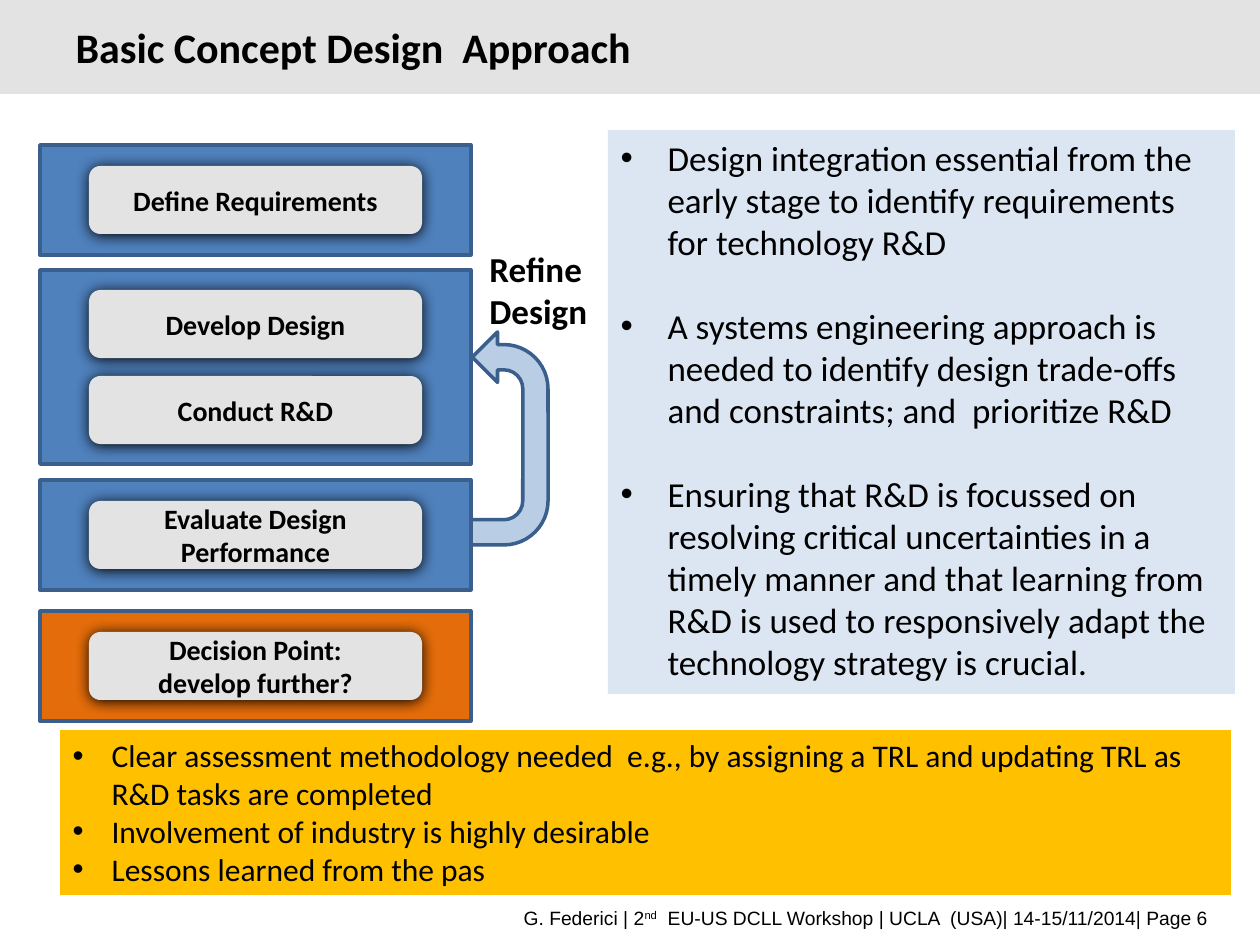
from lxml import etree
from pptx import Presentation
from pptx.dml.color import RGBColor
from pptx.enum.shapes import MSO_SHAPE
from pptx.enum.text import MSO_ANCHOR, MSO_AUTO_SIZE, PP_ALIGN
from pptx.oxml.ns import qn
from pptx.util import Emu, Pt

RECTANGLE = MSO_SHAPE.RECTANGLE
ROUNDED = MSO_SHAPE.ROUNDED_RECTANGLE
UTURN = MSO_SHAPE.U_TURN_ARROW
TOP, MIDDLE = MSO_ANCHOR.TOP, MSO_ANCHOR.MIDDLE
LEFT, CENTER, RIGHT = PP_ALIGN.LEFT, PP_ALIGN.CENTER, PP_ALIGN.RIGHT
PX = 914400 // 126

COLORS = {
    "black": "000000", "grey": "E3E3E3", "blue": "4F81BD", "outline": "3A5F8C",
    "orange": "E46C0A", "arrow": "B9CDE5", "pale": "DCE6F2", "yellow": "FFC000",
}

# Content
TITLE = "Basic Concept Design  Approach"
STAGES = [  # top, height, fill, steps (each a list of lines)
    (145, 110, "blue", [["Define Requirements"]]),
    (270, 194, "blue", [["Develop Design"], ["Conduct R&D"]]),
    (480, 110, "blue", [["Evaluate Design Performance"]]),
    (611, 110, "orange", [["Decision Point:", "develop further?"]]),
]
PRINCIPLES = [
    "Design integration essential from the early stage to identify requirements for technology R&D",
    "A systems engineering approach is needed to identify design trade-offs and constraints; and  prioritize R&D",
    "Ensuring that R&D is focussed on resolving critical uncertainties in a timely manner and that "
    "learning from R&D is used to responsively adapt the technology strategy is crucial.",
]
ACTIONS = [
    "Clear assessment methodology needed  e.g., by assigning a TRL and updating TRL as R&D tasks are completed",
    "Involvement of industry is highly desirable",
    "Lessons learned from the pas",
]
FOOTER = [("G. Federici | 2", 0), ("nd", 30000),
          ("  EU-US DCLL Workshop | UCLA  (USA)| 14-15/11/2014| Page 6", 0)]

# Layout in px
STAGE_LEFT, STAGE_WIDTH = 40, 431
STEP_WIDTH, STEP_HEIGHT, STEP_PITCH = 333, 68, 86


def color(name):
    return RGBColor.from_string(COLORS[name])


def box(*lengths):
    return [Emu(length * PX) for length in lengths]


def style_font(font, size, bold=False, name="Calibri"):
    for key, value in {"name": name, "size": Pt(size), "bold": bold}.items():
        setattr(font, key, value)
    font.color.rgb = color("black")


def write(shape, lines, size, bold=False, align=LEFT, anchor=TOP):
    frame = shape.text_frame
    frame.text = "\n".join(lines)
    formats = {"word_wrap": True, "auto_size": MSO_AUTO_SIZE.NONE, "vertical_anchor": anchor}
    for key, value in formats.items():
        setattr(frame, key, value)
    for paragraph in frame.paragraphs:
        paragraph.alignment = align
        for run in paragraph.runs:
            style_font(run.font, size, bold)


def add_shape(slide, kind, bounds, fill, line=None):
    shape = slide.shapes.add_shape(kind, *box(*bounds))
    shape.shadow.inherit = False
    shape.fill.solid()
    shape.fill.fore_color.rgb = color(fill)
    if line:
        shape.line.color.rgb = color(line)
        shape.line.width = Pt(2)
    else:
        shape.line.fill.background()
    return shape


def add_glow_shadow(shape):
    effects = shape._element.spPr.find(qn("a:effectLst"))
    shadow = etree.SubElement(effects, qn("a:outerShdw"), blurRad=str(Pt(8.5)),
                              dist=str(Pt(1)), dir="5400000", rotWithShape="0")
    etree.SubElement(shadow, qn("a:srgbClr"), val=COLORS["black"])


def place(shape, bounds):
    for key, value in zip(("left", "top", "width", "height"), box(*bounds)):
        setattr(shape, key, value)


def fill_list(placeholder, bounds, items, fill, size, indent, gap):
    place(placeholder, bounds)
    placeholder.fill.solid()
    placeholder.fill.fore_color.rgb = color(fill)
    write(placeholder, items, size)
    for paragraph in placeholder.text_frame.paragraphs:
        properties = paragraph._p.get_or_add_pPr()
        properties.set("marL", str(indent * PX))
        properties.set("indent", str(-indent * PX))
        etree.SubElement(properties, qn("a:buFont"), typeface="Arial")
        etree.SubElement(properties, qn("a:buChar"), char="•")
        paragraph.space_before = Pt(0)
        paragraph.space_after = Pt(gap)


def main():
    presentation = Presentation()
    presentation.slide_width, presentation.slide_height = box(1260, 945)
    slide = presentation.slides.add_slide(presentation.slide_layouts[3])
    title, principles, actions = slide.placeholders

    # Title on its bar
    bar = add_shape(slide, RECTANGLE, (0, 0, 1260, 94), "grey")
    slide.shapes._spTree.insert(2, bar._element)
    place(title, (63, -14, 1043, 122))
    write(title, [TITLE], 24, bold=True, anchor=MIDDLE)

    # Feedback arrow, partly behind the stages
    arrow = add_shape(slide, UTURN, (391, 388, 213, 101), "arrow", "outline")
    arrow.rotation = 270
    arrow._element.spPr.xfrm.set("flipV", "1")
    refine = slide.shapes.add_textbox(*box(477, 241, 169, 97))
    write(refine, ["Refine Design"], 20, bold=True)

    # Stages, each with its steps centred inside
    for top, height, fill, steps in STAGES:
        add_shape(slide, RECTANGLE, (STAGE_LEFT, top, STAGE_WIDTH, height), fill, "outline")
        stack = STEP_HEIGHT + STEP_PITCH * (len(steps) - 1)
        step_left = STAGE_LEFT + (STAGE_WIDTH - STEP_WIDTH) // 2
        for index, lines in enumerate(steps):
            step_top = top + (height - stack) // 2 + index * STEP_PITCH
            step = add_shape(slide, ROUNDED, (step_left, step_top, STEP_WIDTH, STEP_HEIGHT), "grey")
            add_glow_shadow(step)
            write(step, lines, 16, bold=True, align=CENTER, anchor=MIDDLE)

    # Lists
    fill_list(principles, (608, 130, 627, 564), PRINCIPLES, "pale", 20, indent=47, gap=24)
    fill_list(actions, (60, 730, 1171, 165), ACTIONS, "yellow", 18, indent=39, gap=0)

    # Footer
    footer = slide.shapes.add_textbox(*box(86, 900, 1135, 36))
    footer.text_frame.word_wrap = True
    footer.text_frame.vertical_anchor = MIDDLE
    paragraph = footer.text_frame.paragraphs[0]
    paragraph.alignment = RIGHT
    for text, baseline in FOOTER:
        run = paragraph.add_run()
        run.text = text
        style_font(run.font, 11, name="Arial")
        if baseline:
            run._r.get_or_add_rPr().set("baseline", str(baseline))

    presentation.save("out.pptx")


if __name__ == "__main__":
    main()
